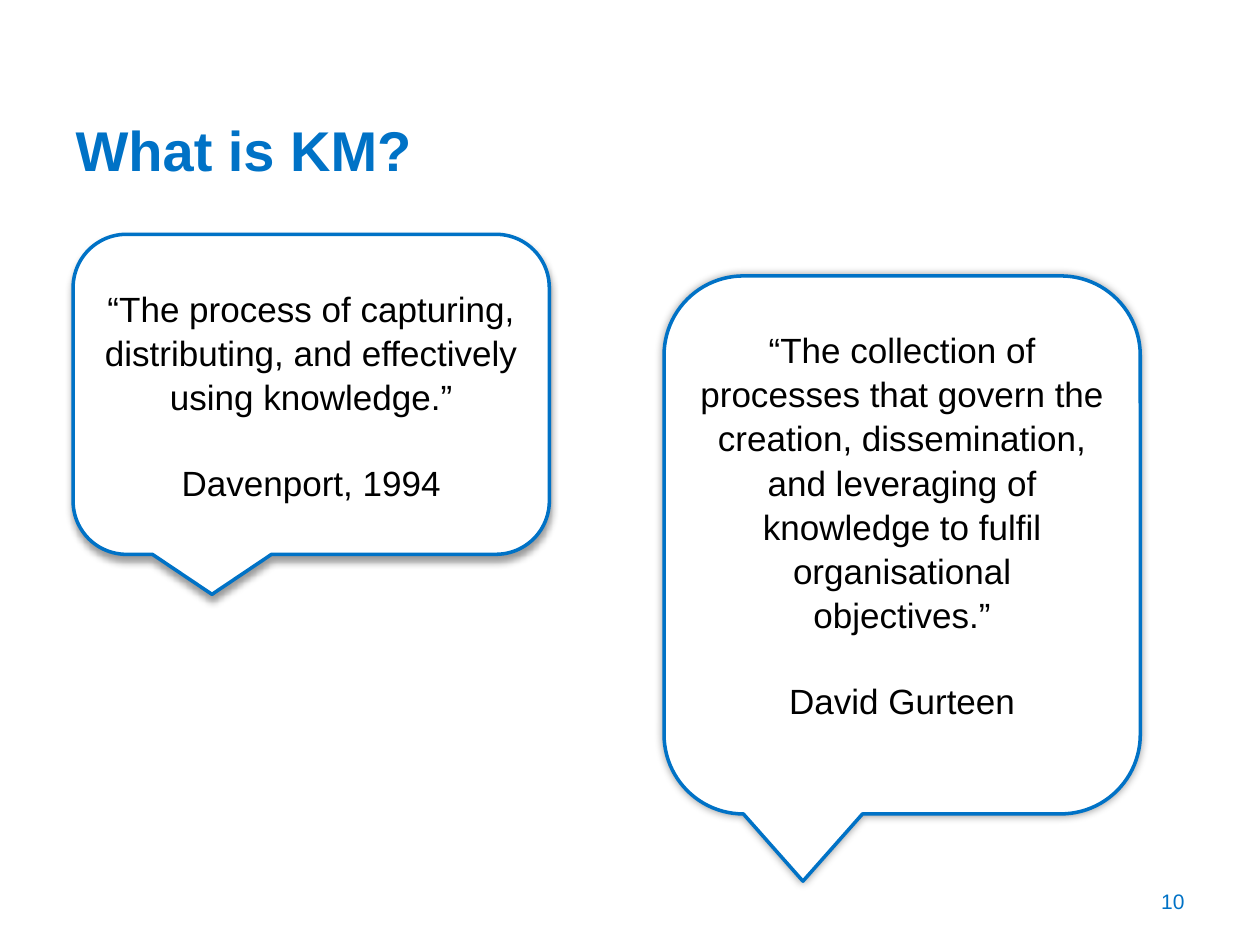
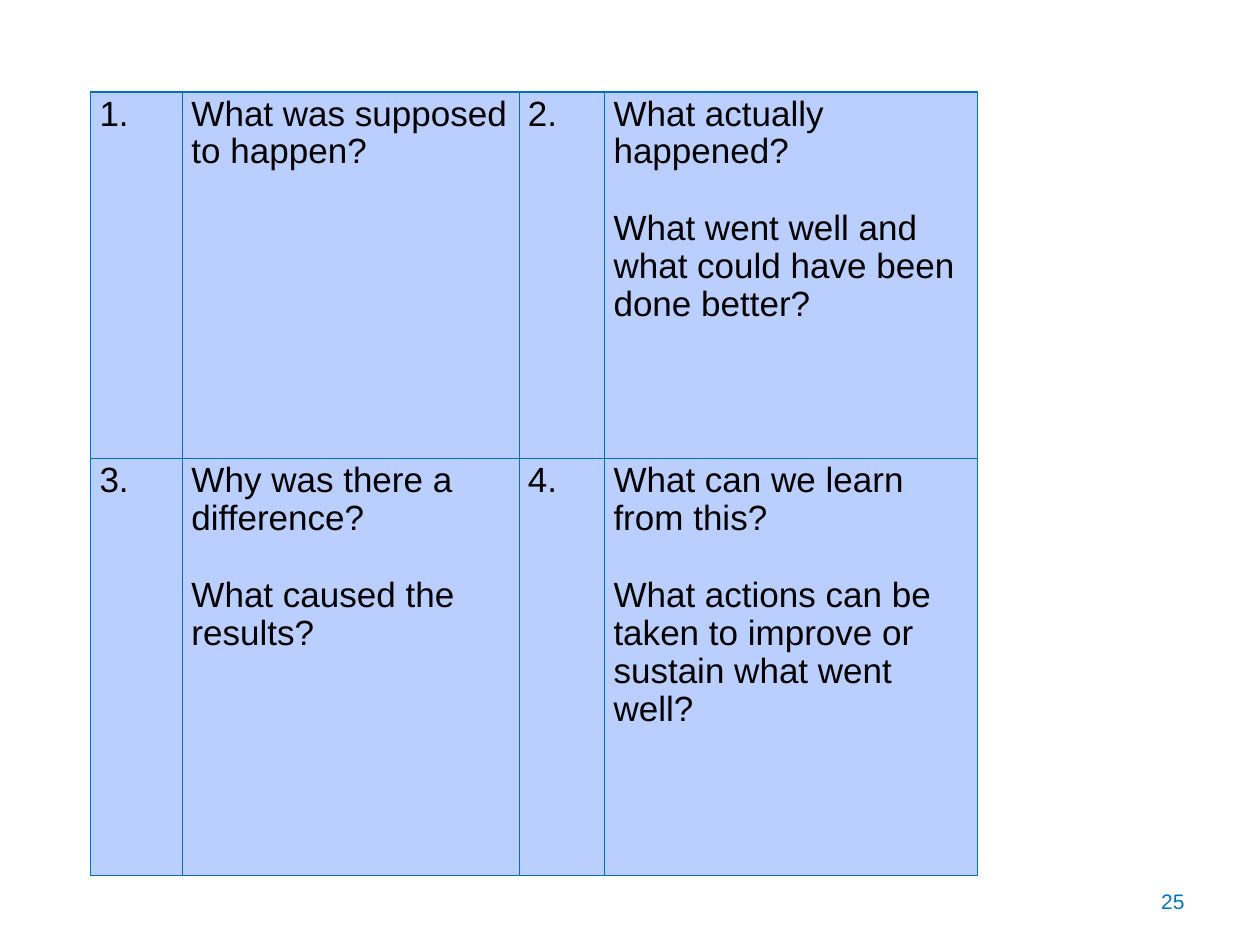
from lxml import etree
from pptx import Presentation
from pptx.dml.color import RGBColor
from pptx.enum.shapes import MSO_SHAPE
from pptx.enum.text import MSO_ANCHOR, PP_ALIGN
from pptx.oxml import parse_xml
from pptx.oxml.ns import nsdecls
from pptx.util import Inches, Pt

COLOURS = {"blue": "0072C6", "border": "006FC2", "cell": "BBCFFF",
           "white": "FFFFFF", "black": "000000"}
FONT = "Arial"


def write(frame, lines, size, colour, align=PP_ALIGN.LEFT, bold=False,
          gap=0, spacing=1.0):
    """Fill a text frame, one paragraph a line, with gap points between them."""
    for index, line in enumerate(lines):
        paragraph = frame.paragraphs[0] if index == 0 else frame.add_paragraph()
        paragraph.text = line
        paragraph.alignment = align
        paragraph.line_spacing = spacing
        paragraph.space_before = Pt(gap if index else 0)
        paragraph.font.name = FONT
        paragraph.font.size = Pt(size)
        paragraph.font.bold = bold
        paragraph.font.color.rgb = RGBColor.from_string(COLOURS[colour])


def add_page_number(slide, number):
    footer = slide.shapes.add_textbox(
        Inches(7.17), Inches(6.95), Inches(2.33), Inches(0.4)).text_frame
    footer.word_wrap = True
    footer.vertical_anchor = MSO_ANCHOR.MIDDLE
    write(footer, [number], 12, "blue", PP_ALIGN.RIGHT)


deck = Presentation()
deck.slide_width, deck.slide_height = Inches(10), Inches(7.5)
title_only, blank = deck.slide_layouts[5], deck.slide_layouts[6]

# Slide 10: two definitions of KM in speech bubbles
definitions = deck.slides.add_slide(title_only)
add_page_number(definitions, "10")

title = definitions.shapes.title
title.left, title.top = Inches(0.5), Inches(0.82)
title.width, title.height = Inches(8.05), Inches(0.73)
title.text_frame.vertical_anchor = MSO_ANCHOR.MIDDLE
write(title.text_frame, ["What is KM?"], 32, "blue", bold=True)

# left, top, height, bottom inset, shadow blur and distance, quote, author
quotes = [
    (5.27, 2.19, 4.27, 0.38, 5, 0,
     "“The collection of processes that govern the creation, dissemination, "
     "and leveraging of knowledge to fulfil organisational objectives.”",
     "David Gurteen"),
    (0.58, 1.86, 2.54, 0.05, 4, 3,
     "“The process of capturing, distributing, and effectively using "
     "knowledge.”",
     "Davenport, 1994"),
]
for left, top, height, inset, blur, distance, quote, author in quotes:
    bubble = definitions.shapes.add_shape(
        MSO_SHAPE.ROUNDED_RECTANGULAR_CALLOUT,
        Inches(left), Inches(top), Inches(3.78), Inches(height))
    bubble.fill.solid()
    bubble.fill.fore_color.rgb = RGBColor.from_string(COLOURS["white"])
    bubble.line.color.rgb = RGBColor.from_string(COLOURS["blue"])
    bubble.line.width = Pt(2)
    bubble.shadow.inherit = False
    effects = bubble.element.spPr.find("{*}effectLst")
    effects.append(parse_xml(
        f'<a:outerShdw {nsdecls("a")} blurRad="{Pt(blur)}" dist="{Pt(distance)}" '
        f'dir="5400000" rotWithShape="0"><a:srgbClr val="{COLOURS["black"]}">'
        '<a:alpha val="40000"/></a:srgbClr></a:outerShdw>'))
    speech = bubble.text_frame
    speech.word_wrap = True
    speech.vertical_anchor = MSO_ANCHOR.MIDDLE
    speech.margin_bottom = Inches(inset)
    write(speech, [quote, author], 20, "black", PP_ALIGN.CENTER,
          gap=24, spacing=1.05)

# Slide 25: four review questions
review = deck.slides.add_slide(blank)
questions = [
    [["1."], ["What was supposed to happen?"],
     ["2."], ["What actually happened?",
              "What went well and what could have been done better?"]],
    [["3."], ["Why was there a difference?", "What caused the results?"],
     ["4."], ["What can we learn from this?",
              "What actions can be taken to improve or sustain what went well?"]],
]
column_widths = [0.73, 2.67, 0.68, 2.96]
row_heights = [2.91, 3.31]
grid = review.shapes.add_table(
    2, 4, Inches(0.72), Inches(0.73),
    Inches(sum(column_widths)), Inches(sum(row_heights))).table
grid.first_row = grid.horz_banding = False
for column, width in zip(grid.columns, column_widths):
    column.width = Inches(width)
for row, height, entries in zip(grid.rows, row_heights, questions):
    row.height = Inches(height)
    for cell, lines in zip(row.cells, entries):
        cell.margin_left = cell.margin_right = Inches(0.07)
        cell.margin_top = cell.margin_bottom = Inches(0.03)
        properties = cell._tc.get_or_add_tcPr()
        for side in "LRTB":
            properties.append(etree.fromstring(
                f'<a:ln{side} {nsdecls("a")} w="{Pt(0.75)}"><a:solidFill>'
                f'<a:srgbClr val="{COLOURS["border"]}"/></a:solidFill></a:ln{side}>'))
        cell.fill.solid()
        cell.fill.fore_color.rgb = RGBColor.from_string(COLOURS["cell"])
        write(cell.text_frame, lines, 20, "black", gap=22.4, spacing=0.97)
add_page_number(review, "25")

deck.save("out.pptx")
